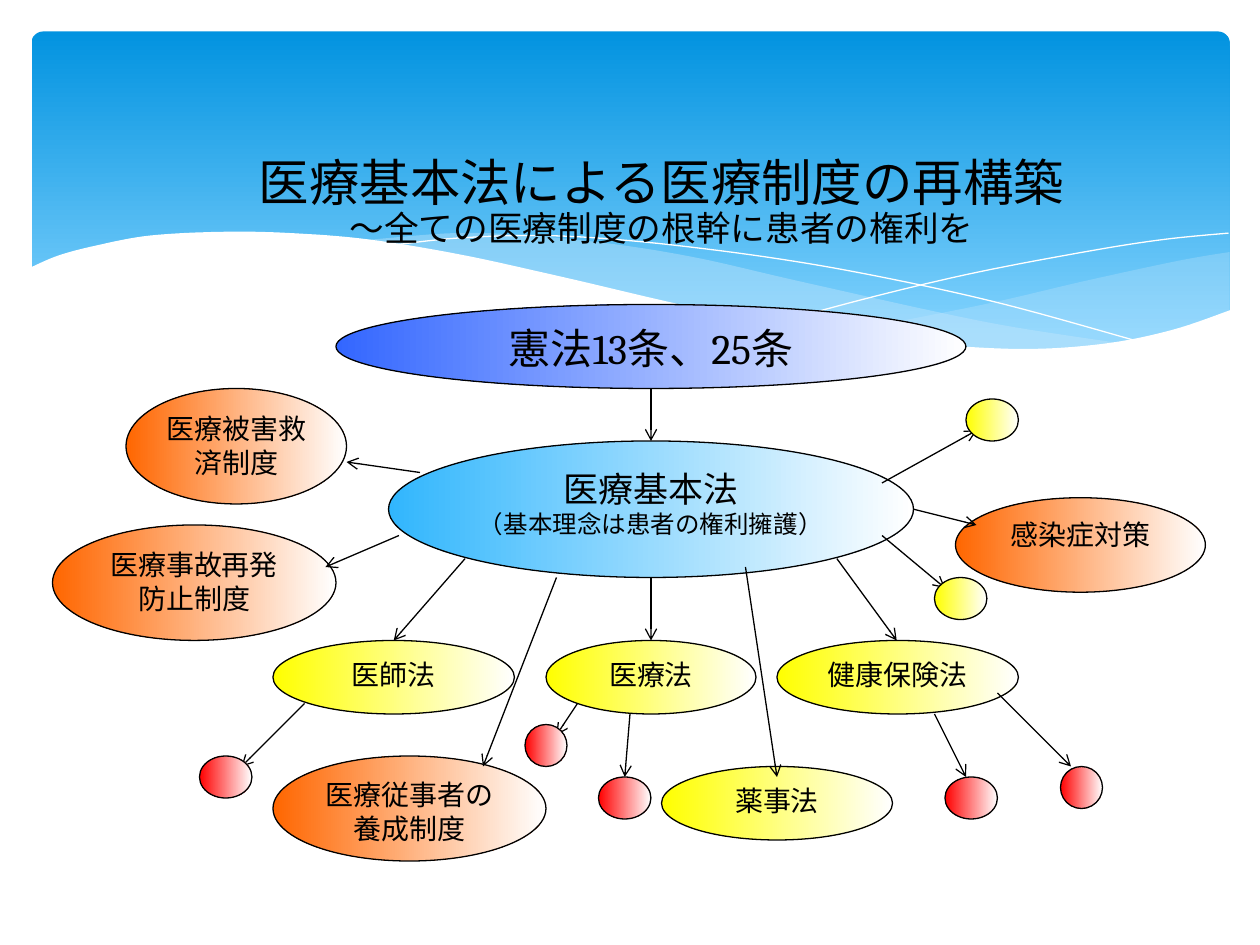
import pptx
import pptx.dml.color
import pptx.enum.shapes
import pptx.enum.text
import pptx.oxml.ns
import pptx.util
from lxml import etree

COLORS = {
    "black": "000000", "white": "FFFFFF", "header_top": "0293E0", "header_low": "83D3FE",
    "wave": "C6E7FC", "royal": "3366FF", "sky": "31B6FD", "yellow": "FFFF00",
    "orange": "FF6600", "red": "FF0000",
}
SLIDE_WIDTH = pptx.util.Inches(10)
SLIDE_HEIGHT = pptx.util.Inches(7.5)
CELL = SLIDE_WIDTH / 120  # diagram grid: 120 columns, 90 rows
FINE = SLIDE_WIDTH / 100  # backdrop grid: 100 columns, 75 rows
KINDS = pptx.enum.shapes.MSO_SHAPE
INSETS = ("margin_left", "margin_right", "margin_top", "margin_bottom")


def color(name):
    return pptx.dml.color.RGBColor.from_string(COLORS[name])


def apply(target, values):
    for name, value in values.items():
        setattr(target, name, value)


def add_xml(parent, tag, **attributes):
    return etree.SubElement(parent, pptx.oxml.ns.qn(tag), attributes)


def smooth(points, steps=8):
    """Catmull-Rom curve through the points."""
    padded = [points[0], *points, points[-1]]
    curve = [points[0]]
    for a, b, c, d in zip(padded, padded[1:], padded[2:], padded[3:]):
        for step in range(1, steps + 1):
            t = step / steps
            curve.append(tuple(
                (2 * q + (r - p) * t + (2 * p - 5 * q + 4 * r - s) * t ** 2
                 + (3 * q - p - 3 * r + s) * t ** 3) / 2
                for p, q, r, s in zip(a, b, c, d)))
    return curve


class Deck:
    outline = pptx.util.Pt(0.75)

    def __init__(self):
        self.presentation = pptx.Presentation()
        apply(self.presentation, {"slide_width": SLIDE_WIDTH, "slide_height": SLIDE_HEIGHT})
        self.slide = self.presentation.slides.add_slide(self.presentation.slide_layouts[6])
        self.shapes = self.slide.shapes

    def stroke(self, line, name, width):
        line.color.rgb = color(name)
        line.width = width

    def gradient(self, shape, stops, angle=0):
        shape.fill.gradient()
        shape.fill.gradient_angle = angle
        for stop, (position, name) in zip(shape.fill.gradient_stops, stops):
            stop.position = position
            stop.color.rgb = color(name)

    def set_text(self, frame, lines, font_name, anchor, inset, spacing=None):
        apply(frame, {"word_wrap": True, "vertical_anchor": anchor})
        apply(frame, dict.fromkeys(INSETS, pptx.util.Inches(inset)))
        for index, (text, size) in enumerate(lines):
            paragraph = frame.add_paragraph() if index else frame.paragraphs[0]
            apply(paragraph, {"alignment": pptx.enum.text.PP_ALIGN.CENTER,
                              "line_spacing": spacing})
            run = paragraph.add_run()
            run.text = text
            apply(run.font, {"name": font_name, "size": pptx.util.Pt(size)})
            run.font.color.rgb = color("black")

    def header(self, left, top, width, height):
        box = [int(value * FINE) for value in (left, top, width, height)]
        shape = self.shapes.add_shape(KINDS.ROUNDED_RECTANGLE, *box)
        shape.shadow.inherit = False
        shape.adjustments[0] = 0.034
        self.gradient(shape, ((0, "header_top"), (0.9, "header_low")), 270)
        shape.line.fill.background()

    def curve(self, points, fill=None, alpha=100, close=False):
        vertices = [(round(x * FINE), round(y * FINE)) for x, y in points]
        builder = self.shapes.build_freeform(*vertices[0])
        builder.add_line_segments(vertices[1:], close=close)
        shape = builder.convert_to_shape()
        shape.shadow.inherit = False
        if fill is None:
            shape.fill.background()
            self.stroke(shape.line, "white", 0)
            return
        shape.fill.solid()
        shape.fill.fore_color.rgb = color(fill)
        shape.line.fill.background()
        if alpha < 100:
            swatch = shape.element.spPr.find(".//" + pptx.oxml.ns.qn("a:srgbClr"))
            add_xml(swatch, "a:alpha", val=str(alpha * 1000))

    def title(self, left, top, width, height, lines):
        box = [int(value * FINE) for value in (left, top, width, height)]
        frame = self.shapes.add_textbox(*box).text_frame
        self.set_text(frame, lines, "Calibri", pptx.enum.text.MSO_ANCHOR.BOTTOM, 0.1, 0.9)

    def ellipse(self, name, left, top, width, height, *lines):
        box = [int(value * CELL) for value in (left, top, width, height)]
        shape = self.shapes.add_shape(KINDS.OVAL, *box)
        shape.shadow.inherit = False
        self.gradient(shape, ((0, name), (1, "white")))
        self.stroke(shape.line, "black", self.outline)
        if lines:
            self.set_text(shape.text_frame, lines, "Cambria",
                          pptx.enum.text.MSO_ANCHOR.TOP, 0.05)

    def arrow(self, *ends):
        connector = self.shapes.add_connector(
            pptx.enum.shapes.MSO_CONNECTOR.STRAIGHT, *[int(value * CELL) for value in ends])
        self.stroke(connector.line, "black", self.outline)
        properties = connector.element.spPr
        add_xml(properties.find(pptx.oxml.ns.qn("a:ln")), "a:tailEnd", type="arrow")
        add_xml(properties, "a:effectLst")


# Backdrop curves, in fine columns and rows
RIGHT_TOP = [(97.6, 20), (93.5, 20.7), (86.1, 22.3), (77.9, 24.2), (66.1, 26.5)]
RIGHT_LOW = [(66.1, 26.5), (71.9, 27.2), (76.9, 27.7), (82.4, 27.7), (87.2, 27.4),
             (92.1, 26.5), (97.6, 24.7)]
MIDDLE_TOP = [(89.3, 27.3), (80.7, 26), (74.1, 24.7), (62.9, 22.2), (55.5, 20.5),
              (48.9, 19.4), (42, 18.7), (36.1, 18.5), (28.6, 19.1)]
MIDDLE_LOW = [(28.6, 19.1), (36.2, 20.3), (44.9, 22.2), (53, 24), (61.8, 25.8),
              (69.5, 27), (77.3, 27.7), (83.8, 27.8), (89.3, 27.3)]
FALLING_LINE = [(30.9, 19.5), (36.3, 18.9), (43.3, 18.7), (51, 19.2), (60.8, 20.4),
                (69.5, 21.9), (79.5, 24.1), (90.7, 27.2)]
RISING_LINE = [(61.3, 25.7), (69.5, 23.5), (77.6, 21.6), (86.6, 19.9), (92.4, 19), (97.5, 18.5)]
WHITE_EDGE = [(97.7, 24.6), (93, 26.2), (87.5, 27.3), (80.9, 27.7), (72.6, 27.2),
              (64.8, 26.2), (55.5, 24.5), (44.7, 22), (36.5, 20.2), (29.2, 19),
              (23, 18.5), (17.7, 18.4), (11.9, 18.7), (7.6, 19.5), (4.6, 20.3), (2.3, 21.3)]

# Diagram parts, in grid columns and rows
LAWS = [
    ("royal", 32, 29, 60, 8, ("憲法13条、25条", 24)),
    ("sky", 37, 42, 50, 13, ("医療基本法", 20), ("（基本理念は患者の権利擁護）", 14)),
    ("yellow", 26, 61, 23, 7, ("医師法", 16)),
    ("yellow", 52, 61, 20, 7, ("医療法", 16)),
    ("yellow", 74, 61, 23, 7, ("健康保険法", 16)),
    ("yellow", 63, 73, 22, 7, ("薬事法", 16)),
    ("orange", 5, 50, 27, 11, ("医療事故再発防止制度", 16)),
    ("orange", 12, 37, 21, 11, ("医療被害救済制度", 16)),
    ("orange", 91, 47.4, 23.8, 9, ("感染症対策", 16)),
    ("orange", 26, 72, 26, 10, ("医療従事者の養成制度", 16)),
]
ARROWS = [
    (62, 37, 62, 42), (62, 55, 62, 61), (44.3, 53.2, 37.5, 61), (79.7, 53.2, 85.4, 61),
    (87, 48.5, 93, 50), (53, 55, 46, 73), (38, 51, 31, 54), (40, 45, 33, 44),
    (71, 54, 74, 74), (89, 68, 92, 74), (95, 66, 102, 73), (60, 68, 59.5, 74),
    (29, 67, 23, 73), (55, 67, 53, 70), (84, 51, 90, 56), (84, 46, 93, 41),
]
DOTS = [
    ("red", 90, 74, 5, 4), ("red", 101, 73, 4, 4), ("red", 57, 74, 5, 4),
    ("red", 19, 72, 5, 4), ("red", 50, 69, 4, 4),
    ("yellow", 89, 55, 5, 4), ("yellow", 92, 38, 5, 4),
]


def main():
    deck = Deck()
    # Backdrop
    deck.header(2.5, 2.5, 95.1, 27)
    deck.curve(smooth(RIGHT_TOP) + smooth(RIGHT_LOW), "wave", 29, True)
    deck.curve(smooth(MIDDLE_TOP) + smooth(MIDDLE_LOW), "wave", 40, True)
    deck.curve(smooth(FALLING_LINE))
    deck.curve(smooth(RISING_LINE))
    deck.curve(smooth(WHITE_EDGE) + [(2.3, 32.9), (97.7, 32.9)], "white", 100, True)
    # Title
    deck.title(11.7, 7.5, 81.6, 13.3, [("医療基本法による医療制度の再構築", 28.8),
                                       ("〜全ての医療制度の根幹に患者の権利を", 19.8)])
    # Diagram: laws, then arrows, then the dots that cover arrow ends
    for law in LAWS:
        deck.ellipse(*law)
    for arrow in ARROWS:
        deck.arrow(*arrow)
    for dot in DOTS:
        deck.ellipse(*dot)
    deck.presentation.save("out.pptx")


if __name__ == "__main__":
    main()
